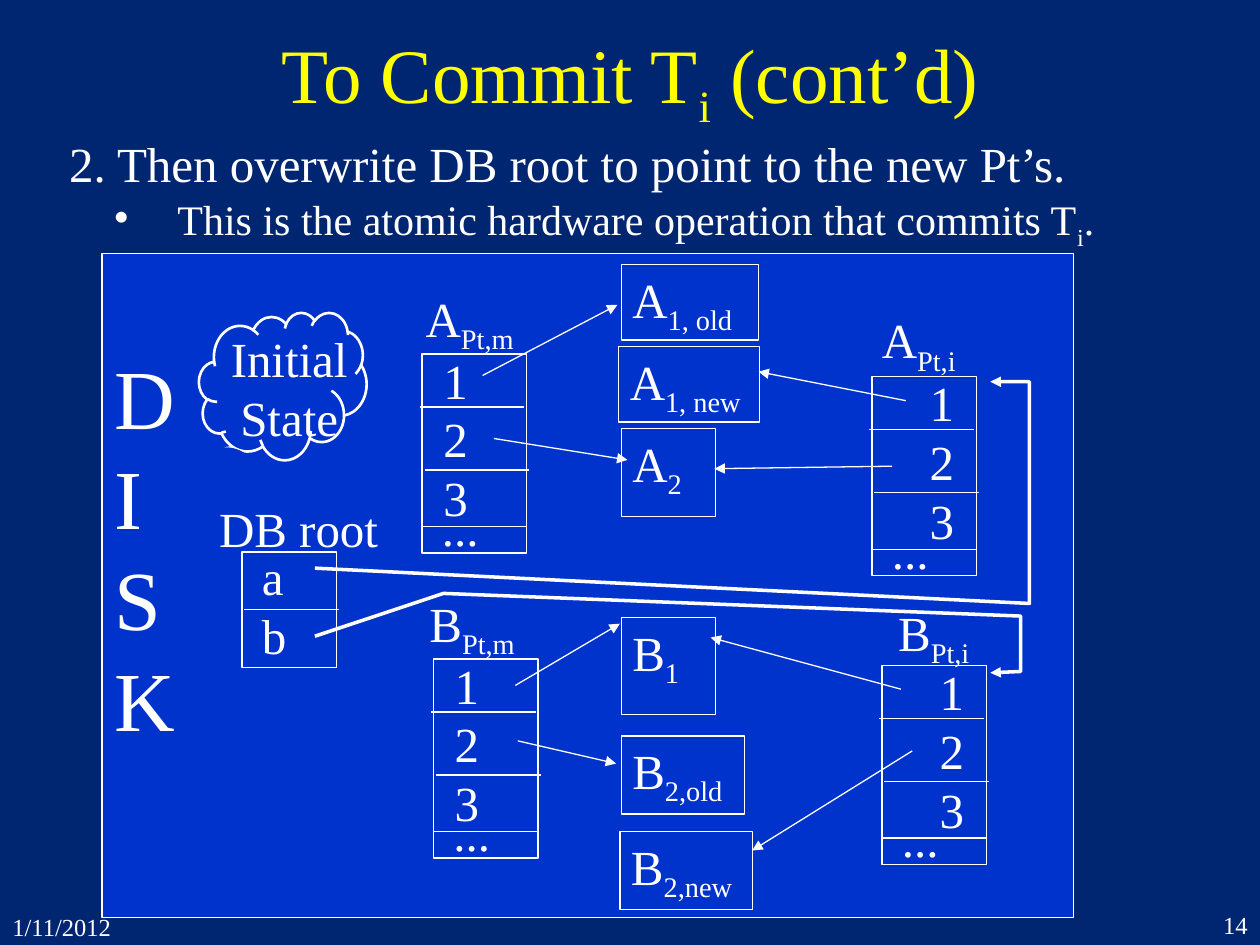
from dataclasses import dataclass

from lxml import etree
from pptx import Presentation
from pptx.dml.color import RGBColor
from pptx.enum import shapes, text
from pptx.oxml import ns
from pptx.util import Inches, Pt

COLORS = {"night": "002672", "disk": "0033CC", "ink": "FFFFFF", "title": "FFFF00"}
FONT = "Times New Roman"
PAGE_WIDTH, PAGE_HEIGHT = 0.83, 1.58
RULES = ((-0.02, 0.42), (0.02, 0.92), (0, 1.37))


@dataclass
class PageTable:
    name: str
    name_left: float
    name_top: float
    left: float
    top: float
    number_indent: float


@dataclass
class Record:
    name: str
    left: float
    top: float
    width: float
    height: float


PAGE_TABLES = (
    PageTable("A|Pt,i", 6.9, 2.41, 6.92, 2.99, 0.36),
    PageTable("B|Pt,i", 7.03, 4.73, 7, 5.28, 0.36),
    PageTable("A|Pt,m", 3.28, 2.24, 3.35, 2.81, 0.07),
    PageTable("B|Pt,m", 3.31, 4.66, 3.44, 5.23, 0.07),
)
RECORDS = (
    Record("A|1, old", 4.93, 2.1, 1.09, 0.6),
    Record("A|1, new", 4.91, 2.75, 1.12, 0.6),
    Record("A|2", 4.93, 3.4, 0.75, 0.7),
    Record("B|1", 4.93, 4.9, 0.75, 0.77),
    Record("B|2,old", 4.93, 5.84, 0.98, 0.62),
    Record("B|2,new", 4.92, 6.6, 1.05, 0.62),
)
POINTERS = (
    ((3.83, 2.98), (4.9, 2.42)),
    ((3.92, 3.48), (4.98, 3.65)),
    ((4.09, 5.44), (4.92, 4.95)),
    ((4.11, 5.88), (4.89, 6.06)),
    ((7.19, 3.18), (6.02, 2.95)),
    ((7.15, 5.47), (5.64, 5.06)),
    ((7.24, 5.96), (5.97, 6.75)),
    ((7.08, 3.7), (5.67, 3.72)),
)
ROOT_POINTERS = (
    ((2.5, 4.51), (8.17, 4.79), (8.17, 3.03), (7.86, 3.03)),
    ((2.5, 5.05), (3.52, 4.71), (8.1, 4.89), (8.1, 5.33), (7.86, 5.34)),
)


def color(name: str) -> RGBColor:
    """Look up a named colour."""
    return RGBColor.from_string(COLORS[name])


def add_text(slide, lines: list[str], left: float, top: float, width: float, height: float,
             size: int = 28, ink: str = "ink", align=text.PP_ALIGN.LEFT,
             anchor=text.MSO_ANCHOR.TOP):
    """Write lines in a box; every second part between bars is a subscript."""
    frame = slide.shapes.add_textbox(
        Inches(left), Inches(top), Inches(width), Inches(height)).text_frame
    frame.word_wrap = True
    frame.vertical_anchor = anchor
    for index, line in enumerate(lines):
        paragraph = frame.add_paragraph() if index else frame.paragraphs[0]
        paragraph.alignment = align
        paragraph.font.name = FONT
        paragraph.font.size = Pt(size)
        paragraph.font.color.rgb = color(ink)
        for part_index, part in enumerate(line.split("|")):
            run = paragraph.add_run()
            run.text = part
            if part_index % 2:
                run.font._element.set("baseline", "-25000")
    return frame


def add_outline(slide, kind, left: float, top: float, width: float, height: float,
                fill: str = "", weight: float = 0.75):
    """Draw a preset shape; a zero weight leaves out the line."""
    outline = slide.shapes.add_shape(
        kind, Inches(left), Inches(top), Inches(width), Inches(height))
    outline.shadow.inherit = False
    if fill:
        outline.fill.solid()
        outline.fill.fore_color.rgb = color(fill)
    else:
        outline.fill.background()
    if weight:
        outline.line.color.rgb = color("ink")
        outline.line.width = Pt(weight)
    else:
        outline.line.fill.background()
    return outline


def add_arrowhead(stroke) -> None:
    """End a line with a triangle."""
    etree.SubElement(stroke.line._get_or_add_ln(), ns.qn("a:tailEnd"), type="triangle")


def add_line(slide, start: tuple[float, float], end: tuple[float, float],
             arrow: bool = False) -> None:
    """Draw a thin straight line between two points."""
    line = slide.shapes.add_connector(
        shapes.MSO_CONNECTOR.STRAIGHT, *map(Inches, (*start, *end)))
    line.line.color.rgb = color("ink")
    line.line.width = Pt(0.75)
    if arrow:
        add_arrowhead(line)
    etree.SubElement(line._element.spPr, ns.qn("a:effectLst"))


def add_root_pointer(slide, points: tuple[tuple[float, float], ...]) -> None:
    """Draw a thick bent arrow through the points."""
    start, *rest = [(Inches(x), Inches(y)) for x, y in points]
    builder = slide.shapes.build_freeform(*start, scale=1.0)
    builder.add_line_segments(rest, close=False)
    pointer = builder.convert_to_shape()
    pointer.shadow.inherit = False
    pointer.fill.background()
    pointer.line.color.rgb = color("ink")
    pointer.line.width = Pt(2)
    add_arrowhead(pointer)


def add_page_table(slide, table: PageTable) -> None:
    """Draw a named page table with its numbered rows."""
    left, top = table.left, table.top
    add_text(slide, [table.name], table.name_left, table.name_top, 1.1, 0.57)
    add_text(slide, ["1", "2", "3"], left + table.number_indent, top - 0.08, 0.4, 1.5)
    add_outline(slide, shapes.MSO_SHAPE.RECTANGLE, left, top, PAGE_WIDTH, PAGE_HEIGHT)
    for dx, dy in RULES:
        add_line(slide, (left + dx, top + dy), (left + dx + PAGE_WIDTH, top + dy))
    add_text(slide, ["..."], left + 0.06, top + 1.09, 0.6, 0.57)


def add_record(slide, record: Record) -> None:
    """Draw a framed record with its name."""
    add_text(slide, [record.name], record.left - 0.01, record.top - 0.01, 1.2, 0.57)
    add_outline(slide, shapes.MSO_SHAPE.RECTANGLE, record.left, record.top,
                record.width, record.height)


def add_initial_state(slide) -> None:
    """Draw the cloud and cover the bubbles of its tail."""
    add_text(slide, ["Initial", "State"], 1.67, 2.56, 1.25, 1.03,
             align=text.PP_ALIGN.CENTER)
    cloud = add_outline(slide, shapes.MSO_SHAPE.CLOUD_CALLOUT, 1.58, 2.48, 1.33, 1.17,
                        weight=1.5)
    cloud.adjustments[0], cloud.adjustments[1] = -0.44, 0.7
    add_outline(slide, shapes.MSO_SHAPE.OVAL, 1.5, 3.55, 0.58, 0.62, "disk", 0)


def add_db_root(slide) -> None:
    """Draw the two-row database root."""
    add_text(slide, ["a", "b"], 1.98, 4.29, 0.4, 1.03)
    add_outline(slide, shapes.MSO_SHAPE.RECTANGLE, 1.92, 4.38, 0.75, 0.92)
    add_line(slide, (1.94, 4.84), (2.69, 4.84))
    add_text(slide, ["DB root"], 1.64, 3.91, 1.6, 0.57)


def add_step(slide) -> None:
    """Write the step and its bulleted remark."""
    add_text(slide, ["2. Then overwrite DB root to point to the new Pt’s."],
             0.45, 1.01, 8.4, 0.57)
    remark = add_text(slide, ["This is the atomic hardware operation that commits T|i|."],
                      0.81, 1.49, 8.62, 0.51, size=24)
    properties = remark.paragraphs[0]._p.get_or_add_pPr()
    properties.set("marL", str(Inches(0.5)))
    properties.set("indent", str(Inches(-0.5)))
    bullet = etree.Element(ns.qn("a:buChar"), char="•")
    properties.insert(0, bullet)


def main() -> None:
    """Build the slide and save it."""
    deck = Presentation()
    deck.slide_width, deck.slide_height = Inches(10), Inches(7.5)
    slide = deck.slides.add_slide(deck.slide_layouts[6])
    slide.background.fill.solid()
    slide.background.fill.fore_color.rgb = color("night")
    add_text(slide, ["1/11/2012"], 0, 7.19, 1.17, 0.25, size=14)
    add_text(slide, ["14"], 9.25, 7.17, 0.75, 0.33, size=14, align=text.PP_ALIGN.RIGHT)
    add_text(slide, ["To Commit T|i| (cont’d)"], 0.75, 0.25, 8.5, 0.75, size=44,
             ink="title", align=text.PP_ALIGN.CENTER, anchor=text.MSO_ANCHOR.MIDDLE)
    add_step(slide)
    add_outline(slide, shapes.MSO_SHAPE.RECTANGLE, 0.81, 2.01, 7.71, 5.27, "disk")
    add_text(slide, ["D", "I", "S", "K"], 0.81, 2.69, 0.75, 3.3, size=48)
    add_initial_state(slide)
    add_db_root(slide)
    for table in PAGE_TABLES:
        add_page_table(slide, table)
    for record in RECORDS:
        add_record(slide, record)
    for start, end in POINTERS:
        add_line(slide, start, end, arrow=True)
    for points in ROOT_POINTERS:
        add_root_pointer(slide, points)
    deck.save("out.pptx")


if __name__ == "__main__":
    main()
